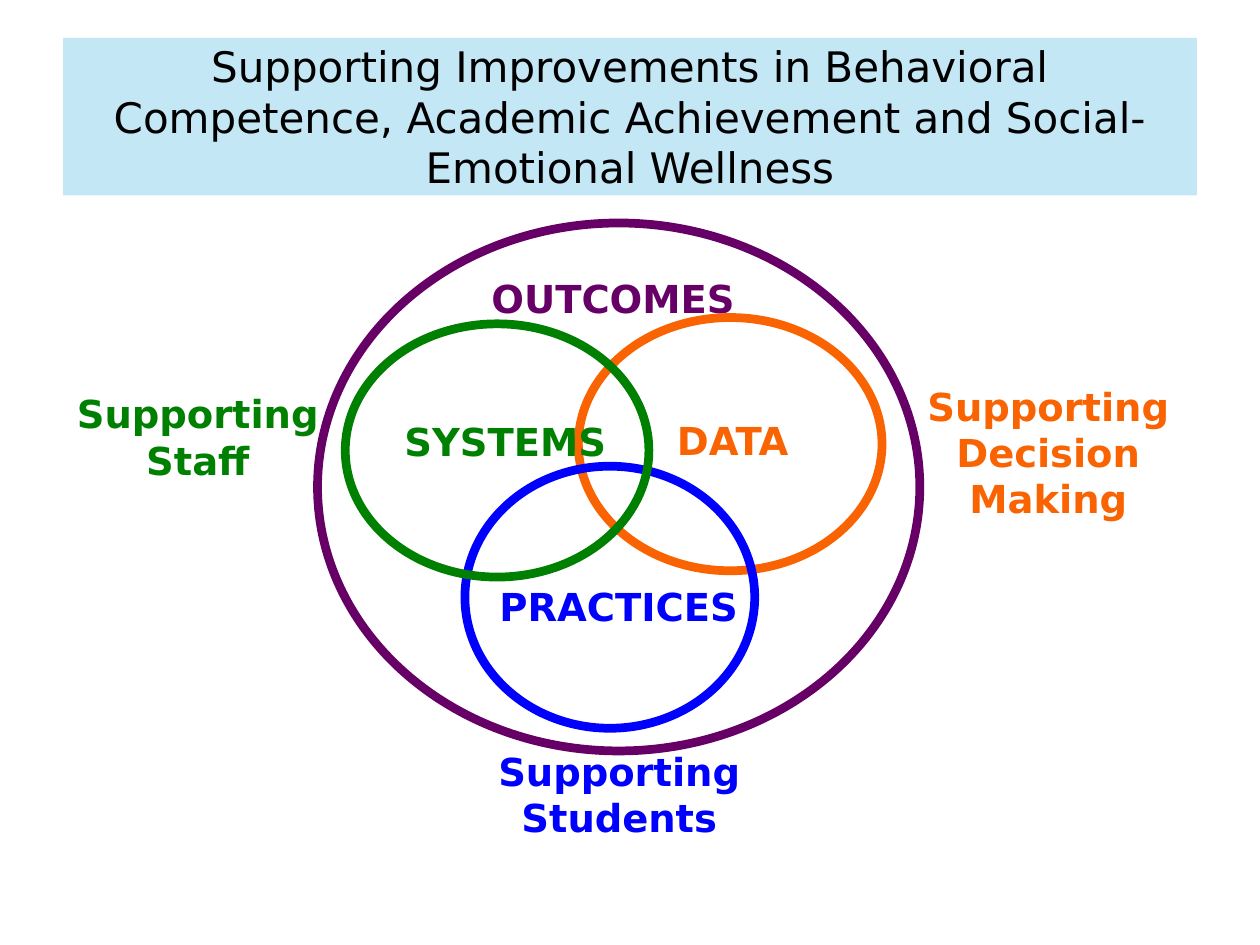
from dataclasses import dataclass

from lxml import etree
from pptx import Presentation
from pptx.dml.color import RGBColor
from pptx.enum import shapes, text
from pptx.oxml.ns import qn
from pptx.util import Inches, Pt


@dataclass(frozen=True)
class Theme:
    font: str = "DejaVu Sans"
    title_size: int = 24
    label_size: int = 22
    ring_width: int = 5
    black: str = "000000"
    banner: str = "A9DCF2"
    banner_opacity: int = 68
    outcomes: str = "660066"
    data: str = "F96301"
    practices: str = "0000FF"
    systems: str = "008000"


THEME = Theme()


def inches(box):
    return [Inches(length) for length in box]


def style(paragraph, size, color, bold=False):
    paragraph.alignment = text.PP_ALIGN.CENTER
    font = paragraph.font
    font.name, font.size, font.bold = THEME.font, Pt(size), bold
    font.color.rgb = RGBColor.from_string(color)


def place_title(slide, box, wording):
    title = slide.shapes.title
    title.left, title.top, title.width, title.height = inches(box)
    title.fill.solid()
    title.fill.fore_color.rgb = RGBColor.from_string(THEME.banner)
    banner_color = title.fill._xPr.find(f"{qn('a:solidFill')}/{qn('a:srgbClr')}")
    alpha = etree.SubElement(banner_color, qn("a:alpha"))
    alpha.set("val", str(THEME.banner_opacity * 1000))

    frame = title.text_frame
    frame.text = wording
    frame.word_wrap = True
    frame.auto_size = text.MSO_AUTO_SIZE.NONE
    frame.vertical_anchor = text.MSO_ANCHOR.MIDDLE
    frame.margin_left = frame.margin_right = Inches(0.13)
    frame.margin_top = frame.margin_bottom = Inches(0.07)
    style(frame.paragraphs[0], THEME.title_size, THEME.black)


def add_ring(slide, box, color):
    ring = slide.shapes.add_shape(shapes.MSO_SHAPE.OVAL, *inches(box))
    ring.shadow.inherit = False
    ring.fill.background()
    ring.line.color.rgb = RGBColor.from_string(color)
    ring.line.width = Pt(THEME.ring_width)


def add_label(slide, box, wording, color):
    frame = slide.shapes.add_textbox(*inches(box)).text_frame
    frame.word_wrap = True
    frame.text = wording
    for paragraph in frame.paragraphs:
        style(paragraph, THEME.label_size, color, bold=True)


def add_element(slide, color, ring_box, *labels):
    """Draw one ring of the diagram with its labels, given as (box, wording)."""
    add_ring(slide, ring_box, color)
    for box, wording in labels:
        add_label(slide, box, wording, color)


def main():
    deck = Presentation()
    deck.slide_width, deck.slide_height = Inches(10), Inches(7.5)
    slide = deck.slides.add_slide(deck.slide_layouts[5])

    place_title(slide, (0.5, 0.3, 9, 1.25),
                "Supporting Improvements in Behavioral Competence, "
                "Academic Achievement and Social-Emotional Wellness")
    add_element(slide, THEME.outcomes, (2.52, 1.77, 4.78, 4.19),
                ((3.62, 2.13, 2.49, 0.43), "OUTCOMES"))
    add_element(slide, THEME.data, (4.59, 2.52, 2.41, 2.01),
                ((5.19, 3.26, 1.25, 0.43), "DATA"),
                ((7.17, 2.99, 2.3, 1.17), "Supporting\nDecision\nMaking"))
    add_element(slide, THEME.practices, (3.69, 3.7, 2.3, 2.08),
                ((3.56, 4.58, 2.7, 0.43), "PRACTICES"),
                ((2.75, 5.89, 4.33, 0.74), "Supporting\nStudents"))
    add_element(slide, THEME.systems, (2.74, 2.57, 2.41, 2.01),
                ((3.02, 3.27, 1.98, 0.43), "SYSTEMS"),
                ((0.39, 3.05, 2.36, 1.04), "Supporting\nStaff"))

    deck.save("out.pptx")


if __name__ == "__main__":
    main()
